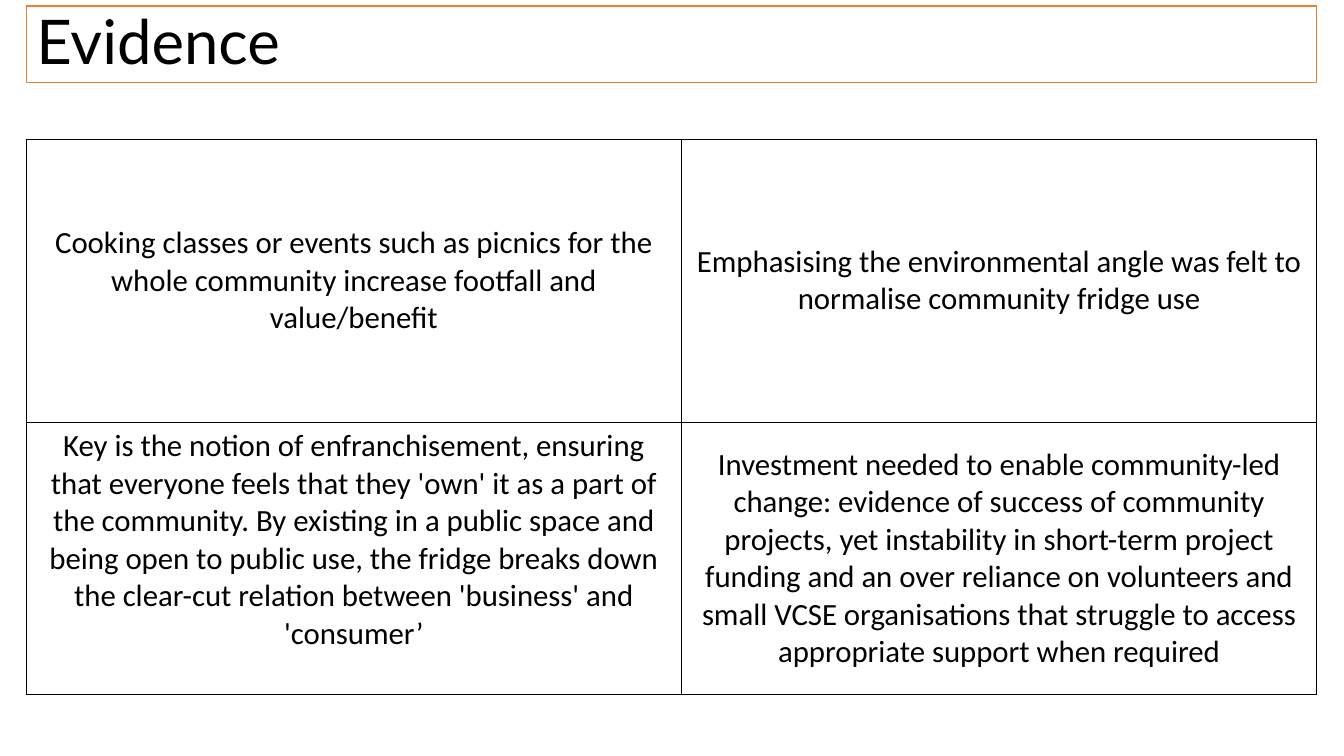
import pptx
import pptx.dml.color
import pptx.enum.text
import pptx.oxml
import pptx.oxml.ns
import pptx.util

BLACK = pptx.dml.color.RGBColor(0x00, 0x00, 0x00)
WHITE = pptx.dml.color.RGBColor(0xFF, 0xFF, 0xFF)
ORANGE = pptx.dml.color.RGBColor(0xED, 0x7D, 0x31)
ALIGN = pptx.enum.text.PP_ALIGN
MIDDLE = pptx.enum.text.MSO_ANCHOR.MIDDLE

# Page grid: 100 columns by 100 rows
GRID = 100
LEFT, WIDTH = 1.95, 96.02
COLUMNS = [48.76, 47.26]
ROWS = [37.47, 36]

EVIDENCE = [
    ["Cooking classes or events such as picnics for the whole community "
     "increase footfall and value/benefit",
     "Emphasising the environmental angle was felt to normalise community "
     "fridge use"],
    ["Key is the notion of enfranchisement, ensuring that everyone feels that "
     "they 'own' it as a part of the community. By existing in a public space "
     "and being open to public use, the fridge breaks down the clear-cut "
     "relation between 'business' and 'consumer’",
     "Investment needed to enable community-led change: evidence of success of "
     "community projects, yet instability in short-term project funding and an "
     "over reliance on volunteers and small VCSE organisations that struggle "
     "to access appropriate support when required"],
]


def write(tf, text, font="Calibri", size=22, color=BLACK,
          align=ALIGN.CENTER, spacing=1.0):
    p = tf.paragraphs[0]
    p.alignment = align
    p.line_spacing = spacing
    r = p.add_run()
    r.text = text
    r.font.name = font
    r.font.size = pptx.util.Pt(size)
    r.font.color.rgb = color


class Deck:
    def __init__(self):
        self.prs = pptx.Presentation()
        self.prs.slide_width = pptx.util.Inches(13.33)
        self.prs.slide_height = pptx.util.Inches(7.5)
        self.slide = self.prs.slides.add_slide(self.prs.slide_layouts[5])

    def x(self, columns):
        return round(self.prs.slide_width * columns / GRID)

    def y(self, rows):
        return round(self.prs.slide_height * rows / GRID)

    def title(self, text, top, height):
        sp = self.slide.shapes.title
        sp.left, sp.top = self.x(LEFT), self.y(top)
        sp.width, sp.height = self.x(WIDTH), self.y(height)
        sp.fill.solid()
        sp.fill.fore_color.rgb = WHITE
        sp.line.color.rgb = ORANGE
        sp.line.width = pptx.util.Pt(1)
        tf = sp.text_frame
        tf.word_wrap = True
        tf.auto_size = pptx.enum.text.MSO_AUTO_SIZE.NONE
        tf.vertical_anchor = MIDDLE
        write(tf, text, font="Lato", size=44, align=ALIGN.LEFT, spacing=0.9)

    def border(self, cell):
        tc_pr = cell._tc.get_or_add_tcPr()
        for i, side in enumerate(("lnL", "lnR", "lnT", "lnB")):
            tc_pr.insert(i, pptx.oxml.parse_xml(
                f'<a:{side} {pptx.oxml.ns.nsdecls("a")} w="12700"><a:solidFill>'
                f'<a:srgbClr val="{BLACK}"/></a:solidFill></a:{side}>'))

    def table(self, texts, top):
        table = self.slide.shapes.add_table(
            len(ROWS), len(COLUMNS), self.x(LEFT), self.y(top),
            self.x(sum(COLUMNS)), self.y(sum(ROWS))).table
        table.first_row = table.horz_banding = False
        for column, width in zip(table.columns, COLUMNS):
            column.width = self.x(width)
        for row, height, row_texts in zip(table.rows, ROWS, texts):
            row.height = self.y(height)
            for cell, text in zip(row.cells, row_texts):
                cell.fill.solid()
                cell.fill.fore_color.rgb = WHITE
                cell.vertical_anchor = MIDDLE
                write(cell.text_frame, text)
                self.border(cell)
        return table


def main():
    deck = Deck()

    # Heading
    deck.title("Evidence", top=0.8, height=10.13)

    # Four findings; the third sits one line higher in its cell
    table = deck.table(EVIDENCE, top=18.4)
    table.cell(1, 0).margin_bottom = pptx.util.Inches(0.42)

    deck.prs.save("out.pptx")


if __name__ == "__main__":
    main()
